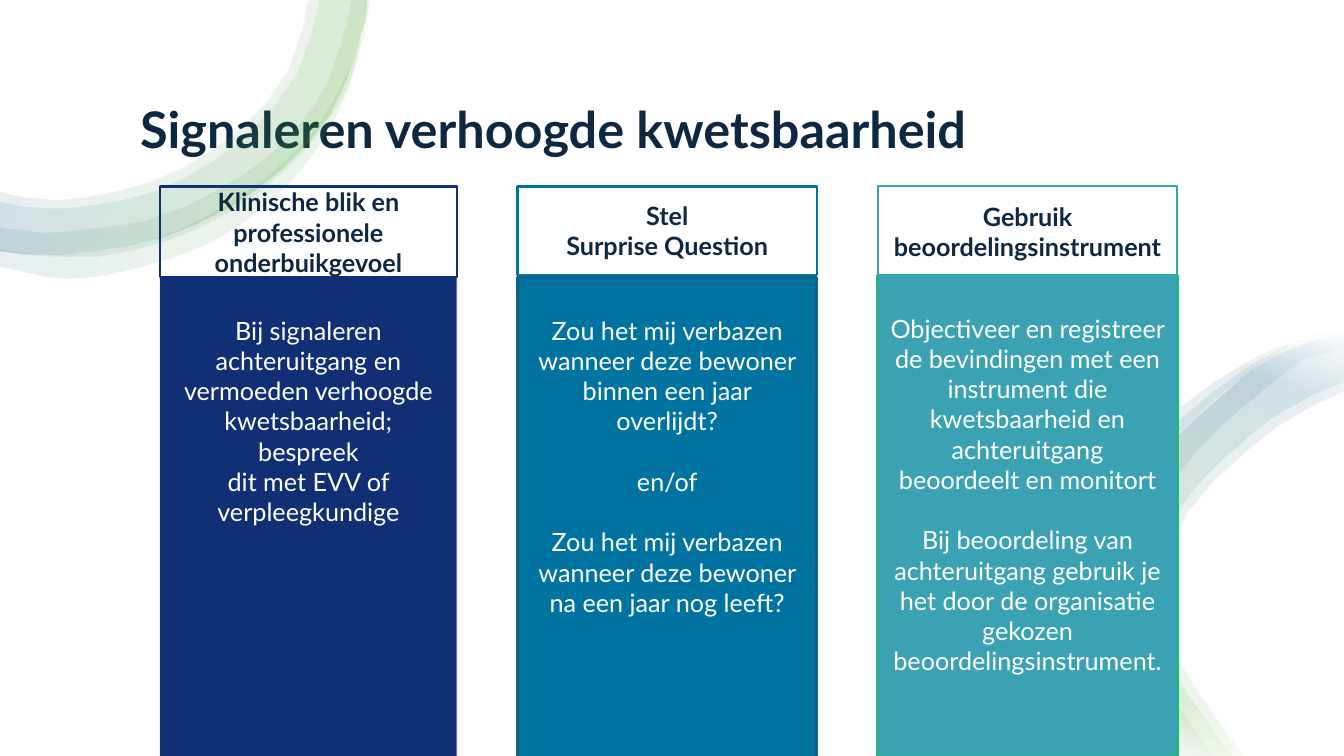
from dataclasses import dataclass
from math import dist

from lxml import etree
from pptx import Presentation
from pptx.dml.color import RGBColor
from pptx.enum.shapes import MSO_SHAPE
from pptx.enum.text import MSO_ANCHOR, MSO_AUTO_SIZE, PP_ALIGN
from pptx.oxml.ns import qn
from pptx.util import Pt

RECTANGLE = MSO_SHAPE.RECTANGLE
LEFT, CENTER = PP_ALIGN.LEFT, PP_ALIGN.CENTER
TOP, MIDDLE, BOTTOM = MSO_ANCHOR.TOP, MSO_ANCHOR.MIDDLE, MSO_ANCHOR.BOTTOM


@dataclass(frozen=True)
class Theme:
    font: str = "Lato"
    title_size: float = 36
    text_size: float = 18
    text_gap: float = 21.6
    ink: str = "0E2841"
    white: str = "FFFFFF"
    # position and colour of each ribbon gradient stop, in percent
    ribbon_stops: tuple = ((2, "FFFFFF"), (16, "4EA72E"), (85, "156082"), (100, "FFFFFF"))
    ribbon_opacity: int = 10


THEME = Theme()
TITLE = "Signaleren verhoogde kwetsbaarheid"
CARD_TOP = 133.2
BODY_HEIGHT = 344
CURVE_STEP = 26

CARDS = [
    dict(left=627.1, width=213.8, header_height=64, body_top=196.6,
         color="3BA2B3", border="22B487", border_width=2, border_opacity=100, header_fill=None,
         header=["Gebruik beoordelingsinstrument"],
         body=["Objectiveer en registreer de bevindingen met een instrument die "
               "kwetsbaarheid en achteruitgang beoordeelt en monitort",
               "Bij beoordeling van achteruitgang gebruik je het door de organisatie "
               "gekozen beoordelingsinstrument."],
         gap=THEME.text_gap),
    dict(left=114.5, width=211.7, header_height=65, body_top=198,
         color="102F75", border="A02B93", border_width=1.5, border_opacity=10, header_fill=None,
         header=["Klinische blik en professionele onderbuikgevoel"],
         body=["Bij signaleren achteruitgang en vermoeden verhoogde kwetsbaarheid; bespreek",
               "dit met EVV of verpleegkundige"],
         gap=0),
    dict(left=369.7, width=213.8, header_height=63, body_top=198,
         color="0073A0", border="156082", border_width=2, border_opacity=100,
         header_fill=THEME.white,
         header=["Stel", "Surprise Question"],
         body=["Zou het mij verbazen wanneer deze bewoner binnen een jaar overlijdt?",
               "en/of",
               "Zou het mij verbazen wanneer deze bewoner na een jaar nog leeft?"],
         gap=THEME.text_gap),
]

# Each band is a pair of edges, followed in order around its outline.
LEFT_OUTER = [(262, 0), (261, 14), (236, 81), (185, 134), (117, 169), (40, 182), (0, 179)]
LEFT_BANDS = [
    (LEFT_OUTER, [(0, 137), (40, 143), (107, 130), (166, 97), (206, 50), (220, 0)]),
    (LEFT_OUTER, [(0, 144), (40, 149), (109, 137), (170, 102), (212, 53), (228, 0)]),
    ([(262, 0), (247, 65), (203, 122), (141, 163), (69, 183), (0, 179)],
     [(0, 162), (32, 166), (101, 158), (133, 147), (192, 111), (234, 59), (251, 0)]),
    ([(264, 0), (249, 63), (210, 127), (148, 174), (71, 197), (31, 197), (0, 190)],
     [(0, 178), (32, 182), (105, 172), (171, 140), (225, 92), (258, 27), (261, 0)]),
]
RIGHT_OUTER = [(837, 540), (804, 485), (793, 431), (814, 344), (873, 282),
               (912, 253), (960, 238)]
RIGHT_BANDS = [
    ([(960, 237), (925, 244), (895, 264), (852, 300), (812, 346), (796, 409), (804, 480),
      (842, 540)],
     [(816, 540), (785, 488), (774, 417), (792, 348), (845, 290), (908, 250), (960, 235)]),
    ([(960, 249), (932, 256), (892, 287), (855, 322), (818, 376), (811, 429), (824, 474),
      (866, 540)],
     [(831, 540), (799, 485), (791, 407), (814, 333), (866, 280), (918, 247), (960, 238)]),
    ([(960, 273), (909, 298), (842, 364), (826, 431), (837, 477), (880, 540)], RIGHT_OUTER),
    ([(960, 280), (913, 304), (848, 366), (832, 431), (842, 472), (888, 540)], RIGHT_OUTER),
]
RIBBONS = [(LEFT_BANDS, 160), (RIGHT_BANDS, 70)]  # bands, gradient angle


def smooth(points):
    """Sample a Catmull-Rom curve through the points, about one sample per CURVE_STEP."""
    padded = [points[0], *points, points[-1]]
    curve = [points[0]]
    for a, b, c, d in zip(padded, padded[1:], padded[2:], padded[3:]):
        steps = max(1, round(dist(b, c) / CURVE_STEP))
        for step in range(1, steps + 1):
            t = step / steps
            curve.append(tuple(
                (2 * q + (r - p) * t + (2 * p - 5 * q + 4 * r - s) * t ** 2
                 + (3 * q - p - 3 * r + s) * t ** 3) / 2
                for p, q, r, s in zip(a, b, c, d)))
    return curve


def set_opacity(color_element, percent):
    etree.SubElement(color_element, qn("a:alpha"), val=str(percent * 1000))


def add_band(slide, edges, angle):
    outline = [(Pt(x), Pt(y)) for edge in edges for x, y in smooth(edge)]
    builder = slide.shapes.build_freeform(*outline[0], scale=1.0)
    builder.add_line_segments(outline[1:], close=True)
    band = builder.convert_to_shape()
    band.shadow.inherit = False
    band.line.fill.background()
    band.fill.gradient()
    band.fill.gradient_angle = angle
    stops = band._element.spPr.find(qn("a:gradFill")).find(qn("a:gsLst"))
    stops.clear()
    for position, color in THEME.ribbon_stops:
        stop = etree.SubElement(stops, qn("a:gs"), pos=str(position * 1000))
        set_opacity(etree.SubElement(stop, qn("a:srgbClr"), val=color), THEME.ribbon_opacity)


def write_text(shape, lines, size, color, bold, align, anchor, gap=0):
    frame = shape.text_frame
    frame.word_wrap = True
    frame.auto_size = MSO_AUTO_SIZE.NONE
    frame.vertical_anchor = anchor
    frame.text = "\n".join(lines)
    for index, paragraph in enumerate(frame.paragraphs):
        paragraph.alignment = align
        paragraph.space_before = Pt(gap if index else 0)
        font = paragraph.font
        font.name, font.size, font.bold = THEME.font, Pt(size), bold
        font.color.rgb = RGBColor.from_string(color)


def add_box(slide, left, top, width, height, fill, border, border_width):
    box = slide.shapes.add_shape(RECTANGLE, Pt(left), Pt(top), Pt(width), Pt(height))
    box.shadow.inherit = False
    if fill:
        box.fill.solid()
        box.fill.fore_color.rgb = RGBColor.from_string(fill)
    else:
        box.fill.background()
    box.line.color.rgb = RGBColor.from_string(border)
    box.line.width = Pt(border_width)
    return box


def add_card(slide, card):
    left, width = card["left"], card["width"]
    body = add_box(slide, left, card["body_top"], width, BODY_HEIGHT,
                   card["color"], card["border"], card["border_width"])
    if card["border_opacity"] < 100:
        border_color = body._element.spPr.find(qn("a:ln")).find(".//" + qn("a:srgbClr"))
        set_opacity(border_color, card["border_opacity"])
    frame = body.text_frame
    frame.margin_left = frame.margin_right = frame.margin_bottom = Pt(9)
    frame.margin_top = Pt(27)
    write_text(body, card["body"], THEME.text_size, THEME.white, False, CENTER, TOP, card["gap"])
    header = add_box(slide, left, CARD_TOP, width, card["header_height"],
                     card["header_fill"], card["color"], 1.5)
    write_text(header, card["header"], THEME.text_size, THEME.ink, True, CENTER, MIDDLE)


def main():
    presentation = Presentation()
    presentation.slide_width, presentation.slide_height = Pt(960), Pt(540)
    slide = presentation.slides.add_slide(presentation.slide_layouts[5])
    title = slide.shapes.title
    title.left, title.top, title.width, title.height = Pt(92.9), Pt(13), Pt(840), Pt(104.4)
    write_text(title, [TITLE], THEME.title_size, THEME.ink, True, LEFT, BOTTOM)
    title.text_frame.paragraphs[0].line_spacing = 0.9
    for bands, angle in RIBBONS:
        for edges in bands:
            add_band(slide, edges, angle)
    for card in CARDS:
        add_card(slide, card)
    presentation.save("out.pptx")


if __name__ == "__main__":
    main()
